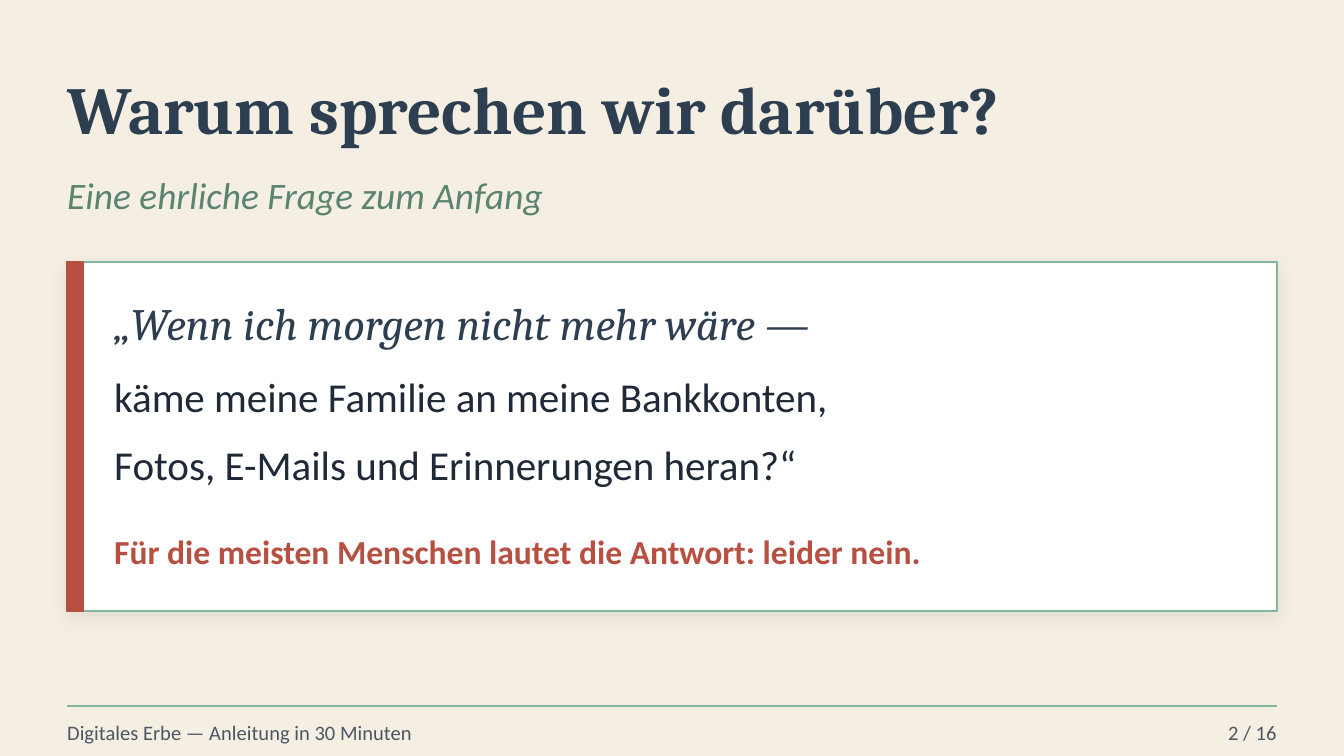
import lxml.etree
import pptx
import pptx.dml.color
import pptx.enum.shapes
import pptx.enum.text
import pptx.oxml.ns
import pptx.util

Cm = pptx.util.Cm
Pt = pptx.util.Pt
RGB = pptx.dml.color.RGBColor
ALIGN = pptx.enum.text.PP_ALIGN
qn = pptx.oxml.ns.qn

CREAM = RGB(0xF5, 0xEF, 0xE3)
NAVY = RGB(0x2C, 0x3E, 0x50)
GREEN = RGB(0x5B, 0x84, 0x70)
MINT = RGB(0x84, 0xB5, 0x9F)
RUST = RGB(0xB8, 0x50, 0x42)
INK = RGB(0x1F, 0x29, 0x37)
GREY = RGB(0x4B, 0x55, 0x63)
WHITE = RGB(0xFF, 0xFF, 0xFF)
BLACK = RGB(0, 0, 0)

SERIF, SANS = "Cambria", "Calibri"
LEFT, WIDTH = 1.27, 22.86
RIGHT = LEFT + WIDTH


class Deck:
    def __init__(self):
        self.prs = pptx.Presentation()
        self.prs.slide_width, self.prs.slide_height = Cm(25.4), Cm(14.29)
        self.slide = None

    def add(self):
        """Start a title-only slide on the cream ground."""
        self.slide = self.prs.slides.add_slide(self.prs.slide_layouts[5])
        fill = self.slide.background.fill
        fill.solid()
        fill.fore_color.rgb = CREAM

    def letter(self, shape, words, size, color, face=SANS, bold=False,
               italic=False, align=ALIGN.LEFT):
        """Put one styled line of words into the shape."""
        frame = shape.text_frame
        frame.word_wrap = True
        frame.auto_size = pptx.enum.text.MSO_AUTO_SIZE.NONE
        frame.vertical_anchor = pptx.enum.text.MSO_ANCHOR.MIDDLE
        frame.margin_left = frame.margin_right = 0
        frame.margin_top = frame.margin_bottom = 0
        para = frame.paragraphs[0]
        para.alignment = align
        run = para.add_run()
        run.text = words
        font = run.font
        font.name, font.size, font.color.rgb = face, Pt(size), color
        font.bold, font.italic = bold, italic

    def title(self, x, y, w, h, words):
        shape = self.slide.shapes.title
        shape.left, shape.top, shape.width, shape.height = map(Cm, (x, y, w, h))
        self.letter(shape, words, 36, NAVY, SERIF, bold=True)

    def text(self, x, y, w, h, words, size, color, **style):
        box = self.slide.shapes.add_textbox(*map(Cm, (x, y, w, h)))
        self.letter(box, words, size, color, **style)

    def rect(self, x, y, w, h, fill, edge):
        kind = pptx.enum.shapes.MSO_SHAPE.RECTANGLE
        shape = self.slide.shapes.add_shape(kind, *map(Cm, (x, y, w, h)))
        shape.fill.solid()
        shape.fill.fore_color.rgb = fill
        shape.line.color.rgb = edge
        shape.line.width = Pt(1)
        shape.shadow.inherit = False
        return shape

    def shade(self, shape):
        """Give the shape a faint, soft shadow straight below it."""
        sub = lxml.etree.SubElement
        effects = shape.element.spPr.find(qn("a:effectLst"))
        outer = sub(effects, qn("a:outerShdw"), blurRad=str(Pt(10)),
                    dist=str(Pt(3)), dir="5400000", algn="bl", rotWithShape="0")
        color = sub(outer, qn("a:srgbClr"), val=str(BLACK))
        sub(color, qn("a:alpha"), val="8000")

    def rule(self, x, y, end, color):
        kind = pptx.enum.shapes.MSO_CONNECTOR.STRAIGHT
        line = self.slide.shapes.add_connector(kind, *map(Cm, (x, y, end, y)))
        line.line.color.rgb = color
        line.line.width = Pt(1)
        lxml.etree.SubElement(line.element.spPr, qn("a:effectLst"))


def main():
    deck = Deck()
    deck.add()
    deck.title(LEFT, 0.89, WIDTH, 2.29, "Warum sprechen wir darüber?")
    deck.text(LEFT, 3.05, WIDTH, 1.27, "Eine ehrliche Frage zum Anfang",
              20, GREEN, italic=True)

    top, height = 4.95, 6.6
    card = deck.rect(LEFT, top, WIDTH, height, WHITE, MINT)
    deck.shade(card)
    deck.rect(LEFT, top, 0.3, height, RUST, RUST)

    quote = [
        (5.33, 1.52, "„Wenn ich morgen nicht mehr wäre —", 24, NAVY,
         {"face": SERIF, "italic": True}),
        (6.86, 1.27, "käme meine Familie an meine Bankkonten,", 22, INK, {}),
        (8.13, 1.27, "Fotos, E-Mails und Erinnerungen heran?“", 22, INK, {}),
        (9.78, 1.27, "Für die meisten Menschen lautet die Antwort: leider nein.",
         18, RUST, {"bold": True}),
    ]
    for y, h, words, size, color, style in quote:
        deck.text(2.16, y, 21.59, h, words, size, color, **style)

    deck.rule(LEFT, 13.34, RIGHT, MINT)
    foot, page = 16.51, 6.35
    deck.text(LEFT, 13.46, foot, 0.76,
              "Digitales Erbe — Anleitung in 30 Minuten", 11, GREY)
    deck.text(RIGHT - page, 13.46, page, 0.76, "2 / 16", 11, GREY,
              align=ALIGN.RIGHT)
    deck.prs.save("out.pptx")


if __name__ == "__main__":
    main()
